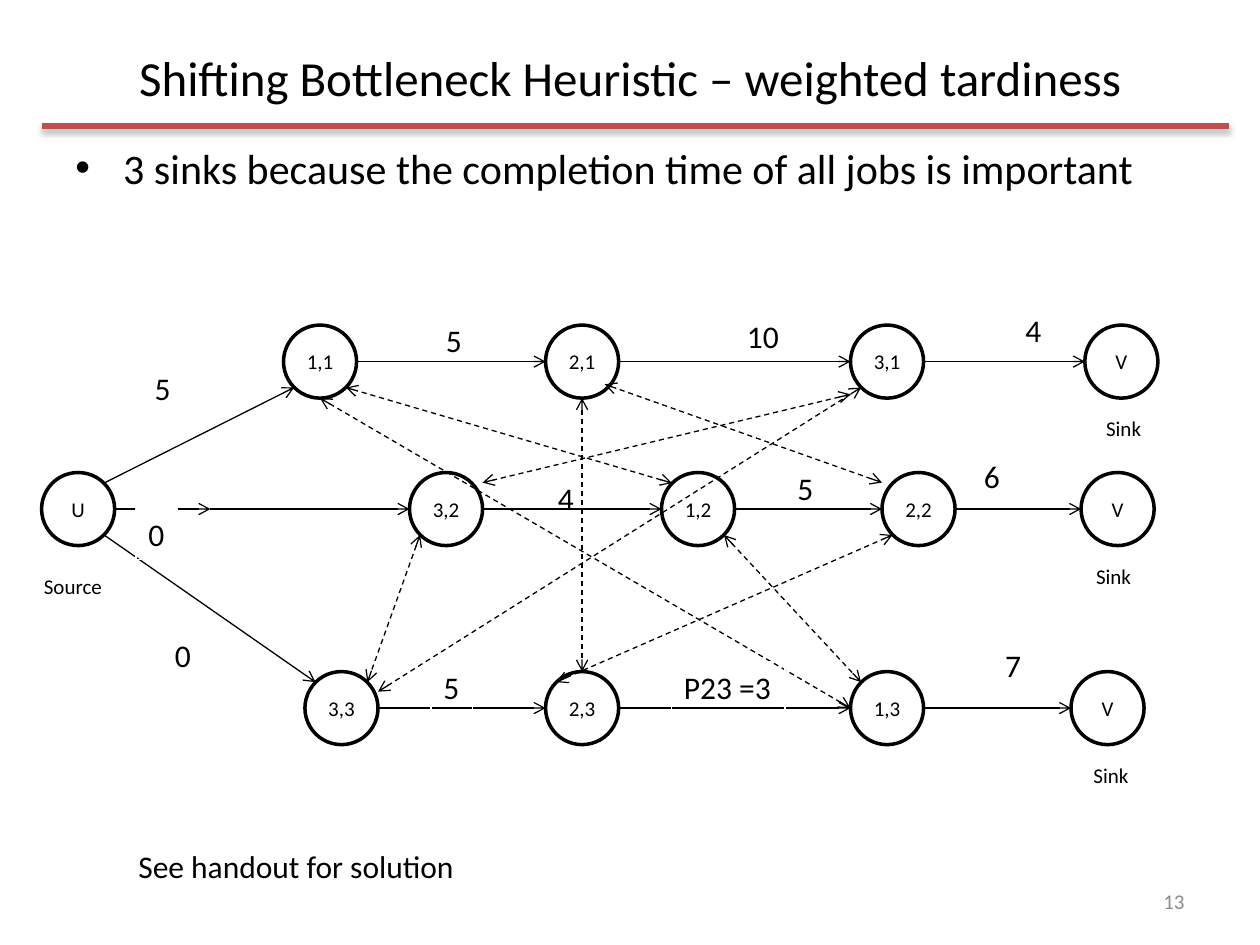
"""Build the job-shop graph slide for the shifting bottleneck heuristic."""
from lxml.etree import SubElement
from pptx import Presentation
from pptx.dml.color import RGBColor
from pptx.enum.dml import MSO_LINE
from pptx.enum.shapes import MSO_CONNECTOR, MSO_SHAPE
from pptx.enum.text import MSO_ANCHOR, PP_ALIGN
from pptx.oxml.ns import qn
from pptx.util import Inches, Pt

TITLE = "Shifting Bottleneck Heuristic – weighted tardiness"
POINT = "3 sinks because the completion time of all jobs is important"
COLORS = {"ink": "000000", "paper": "FFFFFF", "rule": "C0504D", "page": "8C8C8C"}
FONT = "Calibri"
SIZE = 0.58
ROWS = {1: 2.58, 2: 3.75, 3: 5.33}
NODES = {
    "1,1": (2.25, 1), "2,1": (4.33, 1), "3,1": (6.75, 1), "V1": (8.61, 1),
    "U": (0.33, 2), "3,2": (3.25, 2), "1,2": (5.25, 2), "2,2": (7, 2), "V2": (8.58, 2),
    "3,3": (2.42, 3), "2,3": (4.33, 3), "1,3": (6.75, 3), "V3": (8.5, 3),
}
SITES = {
    "N": (0, -1), "S": (0, 1), "E": (1, 0), "W": (-1, 0),
    "NE": (0.71, -0.71), "SE": (0.71, 0.71), "SW": (-0.71, 0.71), "NW": (-0.71, -0.71),
}
CHAINS = [("1,1", "2,1", "3,1", "V1"), ("3,2", "1,2", "2,2", "V2"), ("3,3", "2,3", "1,3", "V3")]
STARTS = [
    (("U", "NE"), ("1,1", "SW")),
    (("U", "E"), (1.67, 4.04)),
    ((1.67, 4.04), ("3,2", "W")),
    (("U", "SE"), ("3,3", "NW")),
]
CLASHES = [
    (("1,2", "NW"), ("1,1", "SE")),
    (("3,2", "SW"), ("3,3", "NE")),
    (("1,3", "W"), ("1,1", "S")),
    ((7, 3.83), (4.8, 3.05)),
    (("2,1", "S"), ("2,3", "N")),
    (("2,3", "NW"), ("2,2", "SW")),
    (("1,2", "SE"), ("1,3", "NW")),
    ((6.75, 3.13), (3.83, 3.83)),
    ((3, 5.49), ("3,1", "SW")),
]
TAGS = [
    ("Source", 0.25, 4.5, 0.67), ("Sink", 8.68, 3.25, 0.48),
    ("Sink", 8.6, 4.42, 0.48), ("Sink", 8.58, 6, 0.48),
]
BOXED = [
    ("P23 =3", 5.33, 5.25, 0.9), ("0", 1.29, 5, 0.33), ("5", 3.42, 5.25, 0.33),
    ("0", 1.08, 4.04, 0.33), ("5", 1.13, 2.88, 0.33),
]
PLAIN = [
    ("7", 7.88, 5.08, 0.33), ("4", 8.04, 2.42, 0.33), ("6", 7.71, 3.58, 0.33),
    ("5", 6.23, 3.67, 0.33), ("4", 4.33, 3.75, 0.33), ("10", 5.83, 2.47, 0.46),
    ("5", 3.44, 2.5, 0.33), ("See handout for solution", 1, 6.67, 2.74),
]


def ink(name):
    return RGBColor.from_string(COLORS[name])


def write(shape, text, size, color="ink", align=PP_ALIGN.LEFT, wrap=False):
    frame = shape.text_frame
    frame.text = text
    frame.word_wrap = wrap
    para = frame.paragraphs[0]
    para.alignment = align
    para.font.name, para.font.size = FONT, Pt(size)
    para.font.color.rgb = ink(color)
    return frame


def label(slide, text, left, top, width, size, boxed):
    box = slide.shapes.add_textbox(
        Inches(left), Inches(top), Inches(width), Inches(0.3 if size == 12 else 0.4))
    write(box, text, size)
    if boxed:
        box.line.color.rgb = ink("paper")
        box.line.width = Pt(0.75)


def node(slide, name):
    left, row = NODES[name]
    oval = slide.shapes.add_shape(
        MSO_SHAPE.OVAL, Inches(left), Inches(ROWS[row]), Inches(SIZE), Inches(SIZE))
    oval.shadow.inherit = False
    oval.fill.solid()
    oval.fill.fore_color.rgb = ink("paper")
    oval.line.color.rgb = ink("ink")
    oval.line.width = Pt(2)
    frame = write(oval, "V" if name[0] == "V" else name, 12, align=PP_ALIGN.CENTER)
    frame.vertical_anchor = MSO_ANCHOR.MIDDLE
    frame.margin_left = frame.margin_right = 0


def place(end):
    if end[0] not in NODES:
        return end
    left, row = NODES[end[0]]
    return tuple(low + SIZE / 2 * (1 + step)
                 for low, step in zip((left, ROWS[row]), SITES[end[1]]))


def link(slide, start, stop, color="ink", width=0.75):
    ends = [Inches(num) for end in (start, stop) for num in place(end)]
    line = slide.shapes.add_connector(MSO_CONNECTOR.STRAIGHT, *ends)
    line.line.color.rgb = ink(color)
    line.line.width = Pt(width)
    return line, SubElement(line._element.spPr, qn("a:effectLst"))


def arrow(slide, start, stop, both=False):
    line, _ = link(slide, start, stop)
    if both:
        line.line.dash_style = MSO_LINE.DASH
    for tag in ("a:headEnd", "a:tailEnd") if both else ("a:tailEnd",):
        SubElement(line.line._get_or_add_ln(), qn(tag), type="arrow")


def header(slide):
    _, glow = link(slide, (0.33, 1), (9.75, 1), "rule", 3)
    shade = SubElement(glow, qn("a:outerShdw"), blurRad=str(Pt(3.1)), dist=str(Pt(1.8)),
                       dir="5400000", rotWithShape="0")
    tone = SubElement(shade, qn("a:srgbClr"), val=COLORS["ink"])
    SubElement(tone, qn("a:alpha"), val="35000")

    title = slide.shapes.title
    title.left, title.top, title.width, title.height = map(Inches, (0.5, 0.3, 9, 0.62))
    frame = write(title, TITLE, 28, align=PP_ALIGN.CENTER, wrap=True)
    frame.vertical_anchor = MSO_ANCHOR.MIDDLE

    body = slide.shapes.add_textbox(*map(Inches, (0.5, 1.08, 9, 5.83)))
    para = write(body, POINT, 24, wrap=True).paragraphs[0]
    para.space_before = Pt(4.8)
    props = para._p.get_or_add_pPr()
    props.set("marL", str(Inches(0.38)))
    props.set("indent", str(Inches(-0.38)))
    mark = SubElement(props, qn("a:buChar"), char="•")
    mark.addprevious(props.makeelement(qn("a:buFont"), {"typeface": "Arial"}))
    fonts = props.find(qn("a:defRPr"))
    if fonts is not None:
        props.append(fonts)

    page = slide.shapes.add_textbox(*map(Inches, (7.17, 6.95, 2.33, 0.4)))
    frame = write(page, "13", 12, "page", PP_ALIGN.RIGHT, True)
    frame.vertical_anchor = MSO_ANCHOR.MIDDLE


def main():
    deck = Presentation()
    deck.slide_width, deck.slide_height = Inches(10), Inches(7.5)
    slide = deck.slides.add_slide(deck.slide_layouts[5])
    header(slide)
    for name in NODES:
        node(slide, name)
    for start, stop in STARTS:
        arrow(slide, start, stop)
    for chain in CHAINS:
        for start, stop in zip(chain, chain[1:]):
            arrow(slide, (start, "E"), (stop, "W"))
    for start, stop in CLASHES:
        arrow(slide, start, stop, True)
    for group, size, boxed in ((TAGS, 12, True), (BOXED, 18, True), (PLAIN, 18, False)):
        for item in group:
            label(slide, *item, size, boxed)
    deck.save("out.pptx")


if __name__ == "__main__":
    main()
